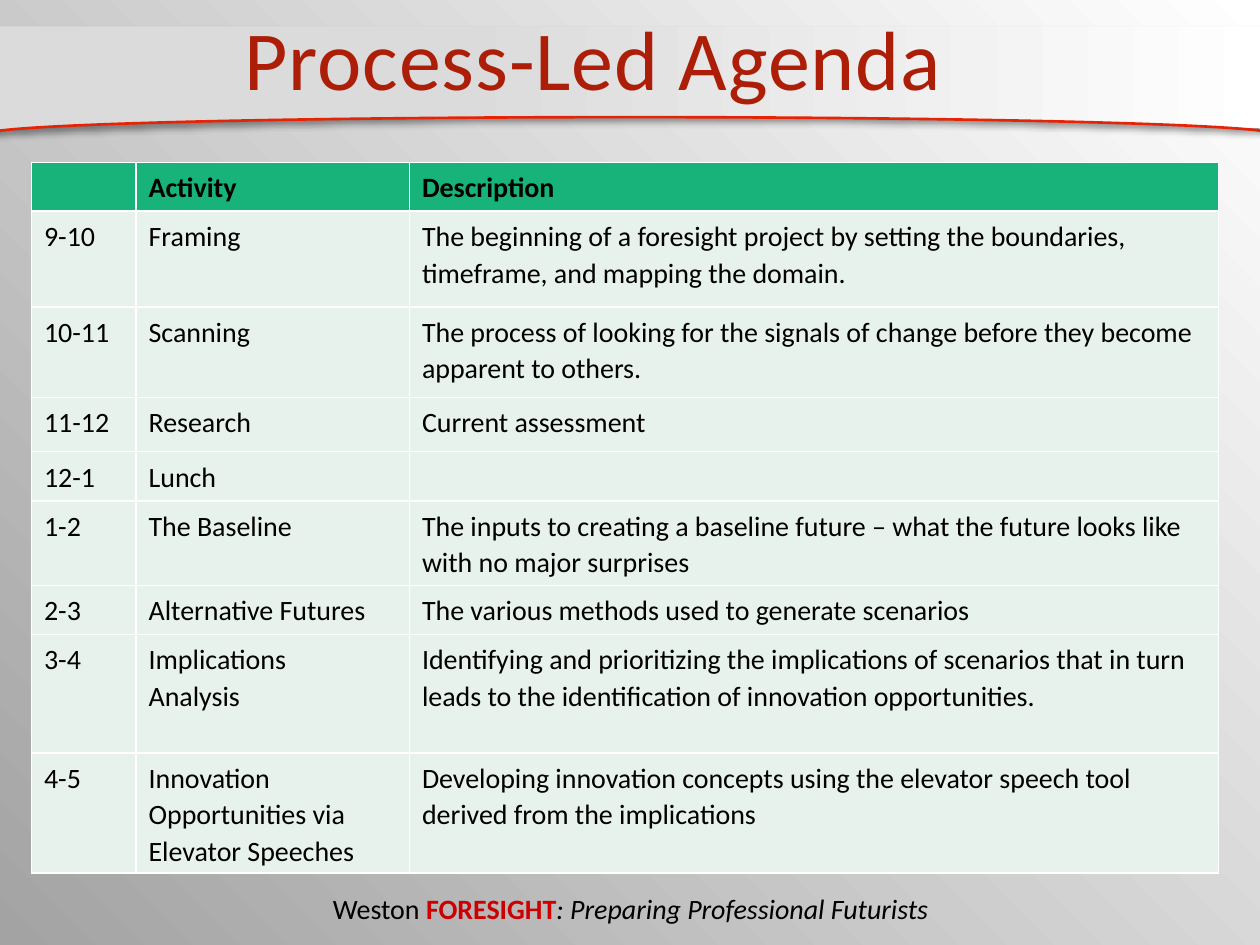
from lxml.etree import SubElement
from pptx import Presentation
from pptx.dml.color import RGBColor
from pptx.enum.shapes import MSO_SHAPE
from pptx.enum.text import MSO_ANCHOR, PP_ALIGN
from pptx.oxml import parse_xml
from pptx.oxml.ns import nsdecls, qn
from pptx.util import Inches, Pt

RED, BLACK, WHITE = "AC1E08", "000000", "FFFFFF"
HEADER, BODY = "18B37A", "E8F2EC"
COLUMNS = [0.83, 2.17, 6.42]
AGENDA = [
    (0.38, "", "Activity", "Description"),
    (0.76, "9-10", "Framing",
     "The beginning of a foresight project by setting the boundaries, timeframe, and mapping the domain."),
    (0.72, "10-11", "Scanning",
     "The process of looking for the signals of change before they become apparent to others."),
    (0.43, "11-12", "Research", "Current assessment"),
    (0.39, "12-1", "Lunch", ""),
    (0.67, "1-2", "The Baseline",
     "The inputs to creating a baseline future – what the future looks like with no major surprises"),
    (0.39, "2-3", "Alternative Futures", "The various methods used to generate scenarios"),
    (0.94, "3-4", "Implications\nAnalysis",
     "Identifying and prioritizing the implications of scenarios that in turn leads to the identification of innovation opportunities."),
    (0.95, "4-5", "Innovation Opportunities via Elevator Speeches",
     "Developing innovation concepts using the elevator speech tool derived from the implications"),
]


def rgb(value):
    return RGBColor.from_string(value)


def curve(p0, p1, p2, p3, steps=40):
    points = []
    for i in range(1, steps + 1):
        t = i / steps
        weights = ((1 - t) ** 3, 3 * t * (1 - t) ** 2, 3 * t * t * (1 - t), t ** 3)
        points.append(tuple(sum(w * v for w, v in zip(weights, axis))
                            for axis in zip(p0, p1, p2, p3)))
    return points


class Deck:
    """Holds the text style and the current slide, and adds each kind of element."""

    style = {"name": "Calibri", "size": Pt(16), "bold": False, "italic": False}

    def __init__(self, prs):
        self.s = prs.slides.add_slide(prs.slide_layouts[6])

    def gradient(self, fill, stops, angle):
        fill.gradient()
        fill.gradient_angle = angle
        for stop, (position, color) in zip(fill.gradient_stops, stops):
            stop.position = position
            stop.color.rgb = rgb(color)

    def run(self, p, text, color=BLACK, **formats):
        r = p.add_run()
        r.text = text
        for name, value in {**self.style, **formats}.items():
            setattr(r.font, name, value)
        r.font.color.rgb = rgb(color)
        return r

    def text(self, box, runs, anchor=MSO_ANCHOR.TOP):
        tf = self.s.shapes.add_textbox(*map(Inches, box)).text_frame
        tf.word_wrap = True
        tf.vertical_anchor = anchor
        p = tf.paragraphs[0]
        p.alignment = PP_ALIGN.CENTER
        return [self.run(p, text, color, **formats) for text, color, formats in runs]

    def band(self, start, points, stops):
        builder = self.s.shapes.build_freeform(*map(Inches, start), scale=1.0)
        builder.add_line_segments([(Inches(x), Inches(y)) for x, y in points])
        sp = builder.convert_to_shape()
        self.gradient(sp.fill, stops, 0)
        sp.line.fill.background()
        sp._element.spPr.append(parse_xml(
            f'<a:effectLst {nsdecls("a")}><a:outerShdw blurRad="{Pt(4)}" dist="{Pt(3)}" dir="5400000">'
            f'<a:srgbClr val="{BLACK}"><a:alpha val="40000"/></a:srgbClr></a:outerShdw></a:effectLst>'))

    def arc(self, box, angles, color, width):
        sp = self.s.shapes.add_shape(MSO_SHAPE.ARC, *map(Inches, box))
        sp.shadow.inherit = False
        sp.fill.background()
        sp.line.color.rgb = rgb(color)
        sp.line.width = Pt(width)
        for i, angle in enumerate(angles):
            sp.adjustments[i] = angle * 0.6

    def cell(self, cell, text, fill, bold):
        tc_pr = cell._tc.get_or_add_tcPr()
        for side in "LRTB":
            tc_pr.append(parse_xml(
                f'<a:ln{side} {nsdecls("a")} w="{Pt(1)}"><a:solidFill><a:srgbClr val="{WHITE}"/>'
                f'</a:solidFill></a:ln{side}>'))
        cell.fill.solid()
        cell.fill.fore_color.rgb = rgb(fill)
        tf = cell.text_frame
        for i, line in enumerate(text.split("\n")):
            p = tf.add_paragraph() if i else tf.paragraphs[0]
            p.line_spacing = 1.07
            if line:
                self.run(p, line, bold=bold)
            else:
                SubElement(p._p, qn("a:endParaRPr"), sz="1600")

    def table(self, left, top, columns, rows):
        heights = [row[0] for row in rows]
        box = (left, top, sum(columns), sum(heights))
        table = self.s.shapes.add_table(len(rows), len(columns), *map(Inches, box)).table
        for column, width in zip(table.columns, columns):
            column.width = Inches(width)
        for i, (height, *texts) in enumerate(rows):
            table.rows[i].height = Inches(height)
            for j, text in enumerate(texts):
                self.cell(table.cell(i, j), text, BODY if i else HEADER, bold=i == 0)


def main():
    prs = Presentation()
    prs.slide_width, prs.slide_height = Inches(10), Inches(7.5)
    deck = Deck(prs)
    deck.gradient(deck.s.background.fill, [(0, WHITE), (1, "A3A3A3")], 225)

    right, crest, left = (10.08, 1.02), (5.23, 0.92), (0, 1.03)
    edge = (curve(right, (8.81, 0.96), (7.1, 0.92), crest)
            + curve(crest, (3.16, 0.92), (1.3, 0.96), left))
    deck.band((-0.09, 0.21), [(10.08, 0.21), right, *edge, (-0.09, 1.03)],
              [(0.36, "DBDBDB"), (1, WHITE)])
    deck.arc((-0.11, 0.93, 10.22, 0.27), (180.03, 359.76), "E62305", 1.5)

    deck.text((1.67, 7.03, 6.67, 0.37), [
        ("Weston ", BLACK, {}),
        ("FORESIGHT", "CC0000", {"bold": True}),
        (": Preparing Professional Futurists", BLACK, {"italic": True}),
    ])
    title, = deck.text((0.17, 0, 9.08, 0.91),
                       [("Process-Led Agenda", RED, {"size": Pt(48)})], MSO_ANCHOR.MIDDLE)
    title.font._element.set("spc", "50")
    deck.table(0.25, 1.29, COLUMNS, AGENDA)
    prs.save("out.pptx")


if __name__ == "__main__":
    main()
